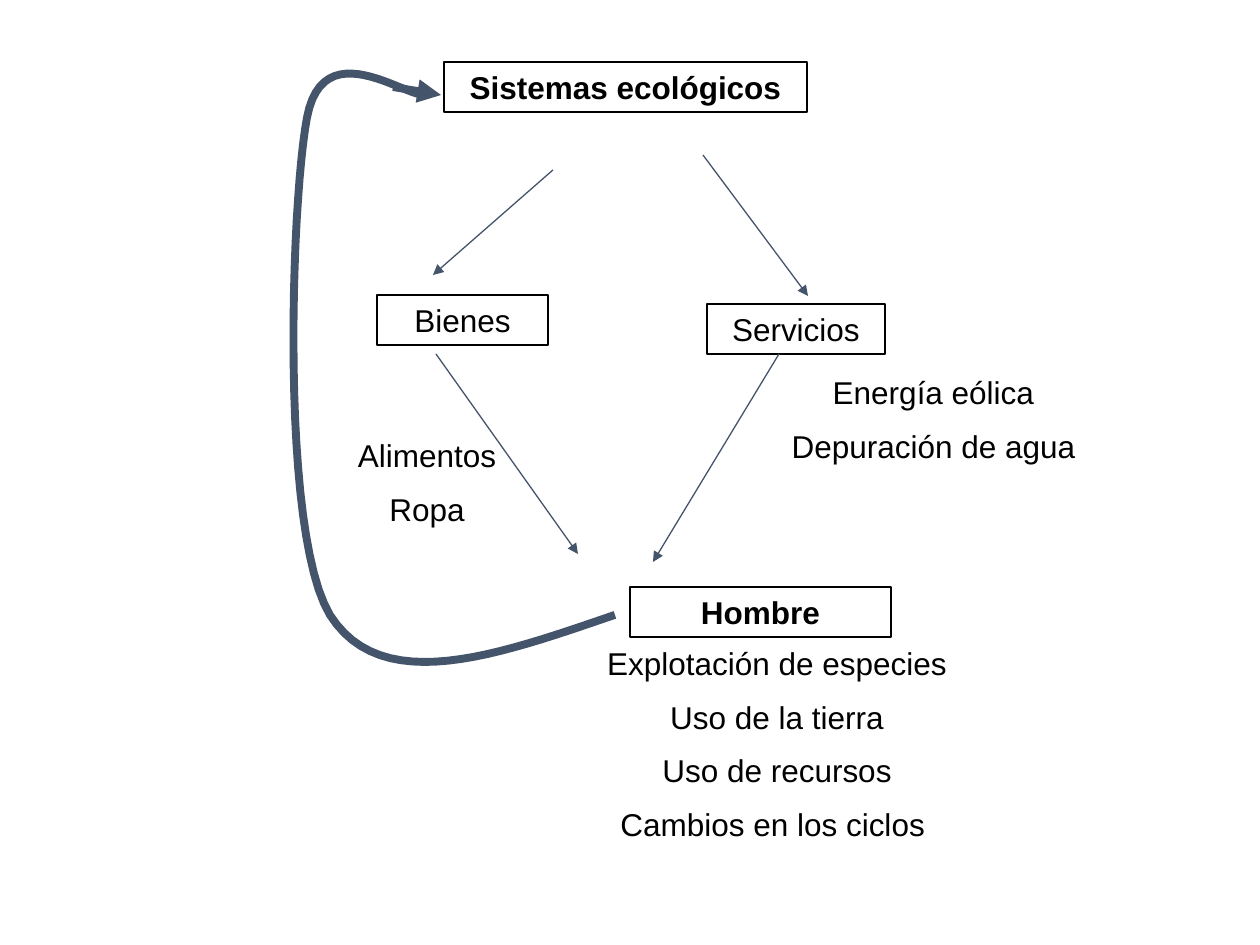
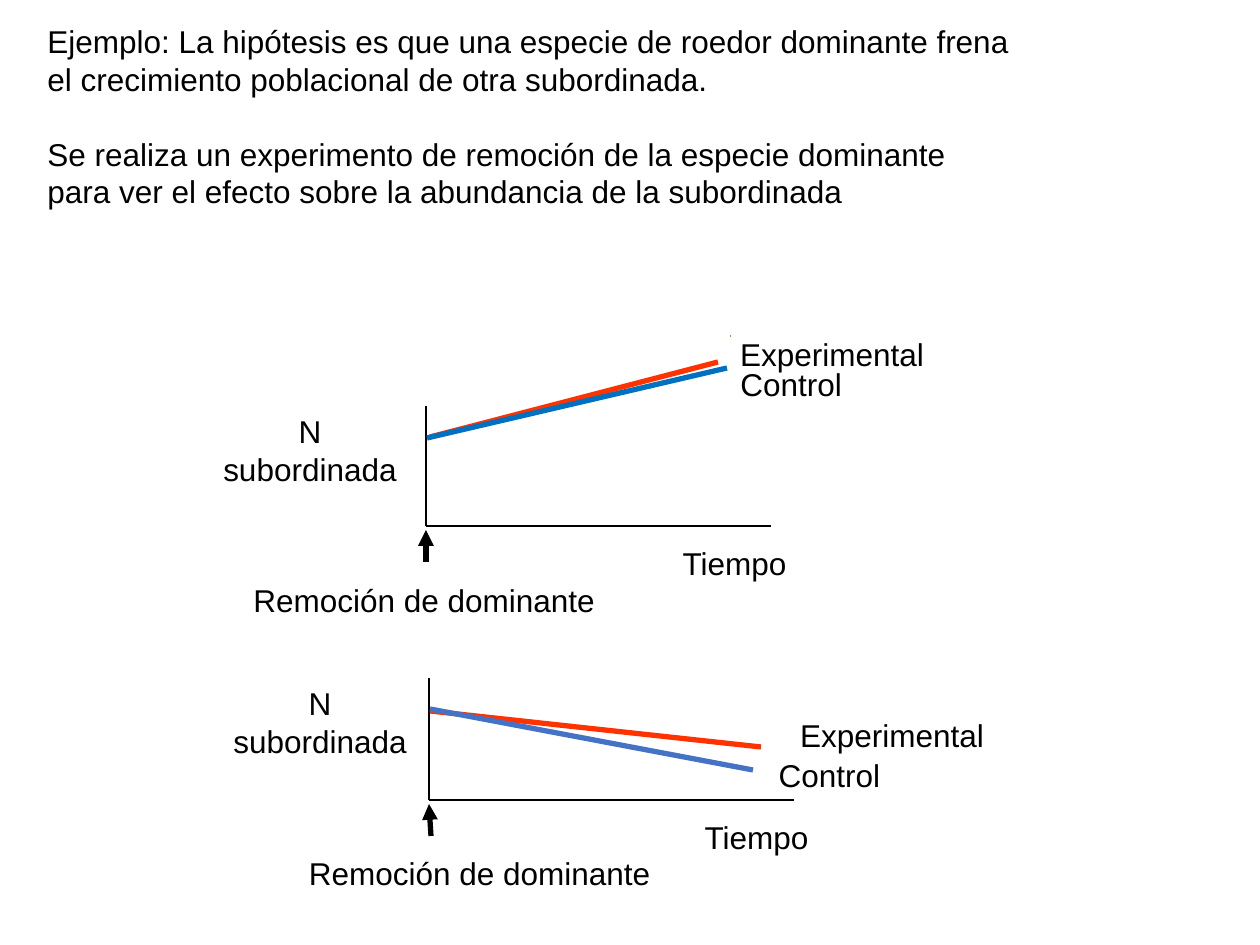
from dataclasses import dataclass

from lxml import etree
from pptx import Presentation
from pptx import util as u
from pptx.dml.color import RGBColor
from pptx.enum import shapes, text
from pptx.oxml.ns import qn

EMU_PER_PX = 914400 / 126
CURVE_STEPS = 24


def px(length):
    return u.Emu(round(length * EMU_PER_PX))


@dataclass(frozen=True)
class Theme:
    font: str = "Arial"
    size: int = 18
    paragraph_gap: int = 9
    thin: float = 0.75
    tick: float = 1.5
    thick: float = 3
    heavy: float = 4.5
    ink: str = "000000"
    flow: str = "44546A"
    experimental: str = "FF3300"
    control_rising: str = "0070C0"
    control_falling: str = "4472C4"
    accent: str = "ED7D31"


class Deck:
    def __init__(self, theme):
        self.theme = theme
        self.presentation = Presentation()
        self.presentation.slide_width = px(1260)
        self.presentation.slide_height = px(945)
        self.slide = None

    def new_slide(self):
        self.slide = self.presentation.slides.add_slide(self.presentation.slide_layouts[6])

    def style_line(self, line, color, width):
        line.color.rgb = RGBColor.from_string(color)
        line.width = u.Pt(width)

    def fill_text(self, shape, paragraphs, bold=False, centered=True, gap=None):
        frame = shape.text_frame
        frame.word_wrap = True
        frame.vertical_anchor = text.MSO_ANCHOR.TOP
        for index, content in enumerate(paragraphs):
            paragraph = frame.add_paragraph() if index else frame.paragraphs[0]
            paragraph.text = content
            paragraph.alignment = text.PP_ALIGN.CENTER if centered else text.PP_ALIGN.LEFT
            if index:
                paragraph.space_before = u.Pt(gap or self.theme.paragraph_gap)
            paragraph.font.name = self.theme.font
            paragraph.font.size = u.Pt(self.theme.size)
            paragraph.font.bold = bold
            paragraph.font.color.rgb = RGBColor.from_string(self.theme.ink)

    def label(self, box, *paragraphs, centered=True, gap=None):
        shape = self.slide.shapes.add_textbox(*map(px, box))
        self.fill_text(shape, paragraphs, centered=centered, gap=gap)

    def box(self, box, content, bold=False):
        shape = self.slide.shapes.add_shape(shapes.MSO_SHAPE.RECTANGLE, *map(px, box))
        shape.shadow.inherit = False
        shape.fill.background()
        self.style_line(shape.line, self.theme.ink, self.theme.thin)
        self.fill_text(shape, [content], bold)

    def line(self, start, end, color, width, arrow=False):
        connector = self.slide.shapes.add_connector(
            shapes.MSO_CONNECTOR.STRAIGHT, *map(px, (*start, *end)))
        self.style_line(connector.line, color, width)
        properties = connector._element.spPr
        etree.SubElement(properties, qn("a:effectLst"))
        if arrow:
            etree.SubElement(properties.find(qn("a:ln")), qn("a:tailEnd"), type="triangle")

    def curve(self, start, segments, color, width):
        points = []
        origin = start
        for first, second, end in segments:
            for step in range(1, CURVE_STEPS + 1):
                t = step / CURVE_STEPS
                points.append(tuple(
                    px((1 - t) ** 3 * a + 3 * (1 - t) ** 2 * t * b
                       + 3 * (1 - t) * t ** 2 * c + t ** 3 * d)
                    for a, b, c, d in zip(origin, first, second, end)))
            origin = end
        builder = self.slide.shapes.build_freeform(*map(px, start))
        builder.add_line_segments(points, close=False)
        shape = builder.convert_to_shape()
        shape.shadow.inherit = False
        shape.fill.background()
        self.style_line(shape.line, color, width)

    def plot(self, origin, top, right, trends, removal, labels, left_aligned=()):
        theme = self.theme
        self.line(origin, (right, origin[1]), theme.ink, theme.thin)
        self.line((origin[0], top), origin, theme.ink, theme.thin)
        for start, end, color in trends:
            self.line(start, end, color, theme.thick)
        self.line(*removal, theme.ink, theme.thick, arrow=True)
        for content, box in labels.items():
            self.label(box, content, centered=content not in left_aligned)


def build_ecosystem_flow(deck):
    theme = deck.theme
    deck.new_slide()
    deck.box((444, 62, 363, 50), "Sistemas ecológicos", bold=True)
    deck.box((377, 295, 171, 50), "Bienes")
    deck.box((707, 304, 178, 50), "Servicios")
    deck.box((630, 587, 261, 50), "Hombre", bold=True)
    for start, end in (
        ((553, 170), (433, 275)),
        ((703, 155), (808, 296)),
        ((436, 354), (578, 554)),
        ((779, 354), (653, 562)),
    ):
        deck.line(start, end, theme.flow, theme.thin, arrow=True)
    deck.label((591, 638, 372, 280), "Explotación de especies", "Uso de la tierra",
               "Uso de recursos", "Cambios en los ciclos ")
    deck.curve((615, 615), (
        ((498, 655), (382, 697), (330, 615)),
        ((280, 532), (291, 204), (307, 118)),
        ((323, 32), (406, 98), (426, 95)),
    ), theme.flow, theme.heavy)
    deck.line((393, 87), (441, 95), theme.flow, theme.heavy, arrow=True)
    deck.label((771, 367, 325, 108), "Energía eólica", "Depuración de agua")
    deck.label((345, 430, 164, 108), "Alimentos", "Ropa")


def build_removal_experiment(deck):
    theme = deck.theme
    deck.new_slide()
    deck.plot(
        origin=(426, 526), top=406, right=771,
        trends=(((430, 437), (718, 362), theme.experimental),
                ((427, 438), (727, 368), theme.control_rising)),
        removal=((426, 562), (426, 530)),
        labels={
            "Control": (728, 359, 149, 50),
            "Tiempo": (660, 538, 149, 50),
            "N subordinada": (203, 406, 214, 89),
            "Experimental": (717, 329, 230, 50),
            "Remoción de dominante": (232, 575, 384, 50),
        },
        left_aligned=("Control",))
    deck.label((35, 16, 992, 242),
               "Ejemplo: La hipótesis es que una especie de roedor dominante frena "
               "el crecimiento poblacional de otra subordinada.",
               "Se realiza un experimento de remoción de la especie dominante "
               "para ver el efecto sobre la abundancia de la subordinada",
               centered=False, gap=21)
    deck.plot(
        origin=(429, 800), top=678, right=794,
        trends=(((430, 711), (761, 747), theme.experimental),
                ((430, 709), (753, 770), theme.control_falling)),
        removal=((431, 836), (429, 804)),
        labels={
            "Experimental": (770, 710, 244, 50),
            "Tiempo": (678, 812, 157, 50),
            "N subordinada": (219, 678, 202, 89),
            "Control": (751, 750, 157, 50),
            "Remoción de dominante": (268, 848, 423, 50),
        })
    deck.line((730, 336), (731, 336), theme.accent, theme.tick)


def main():
    deck = Deck(Theme())
    build_ecosystem_flow(deck)
    build_removal_experiment(deck)
    deck.presentation.save("out.pptx")


if __name__ == "__main__":
    main()
